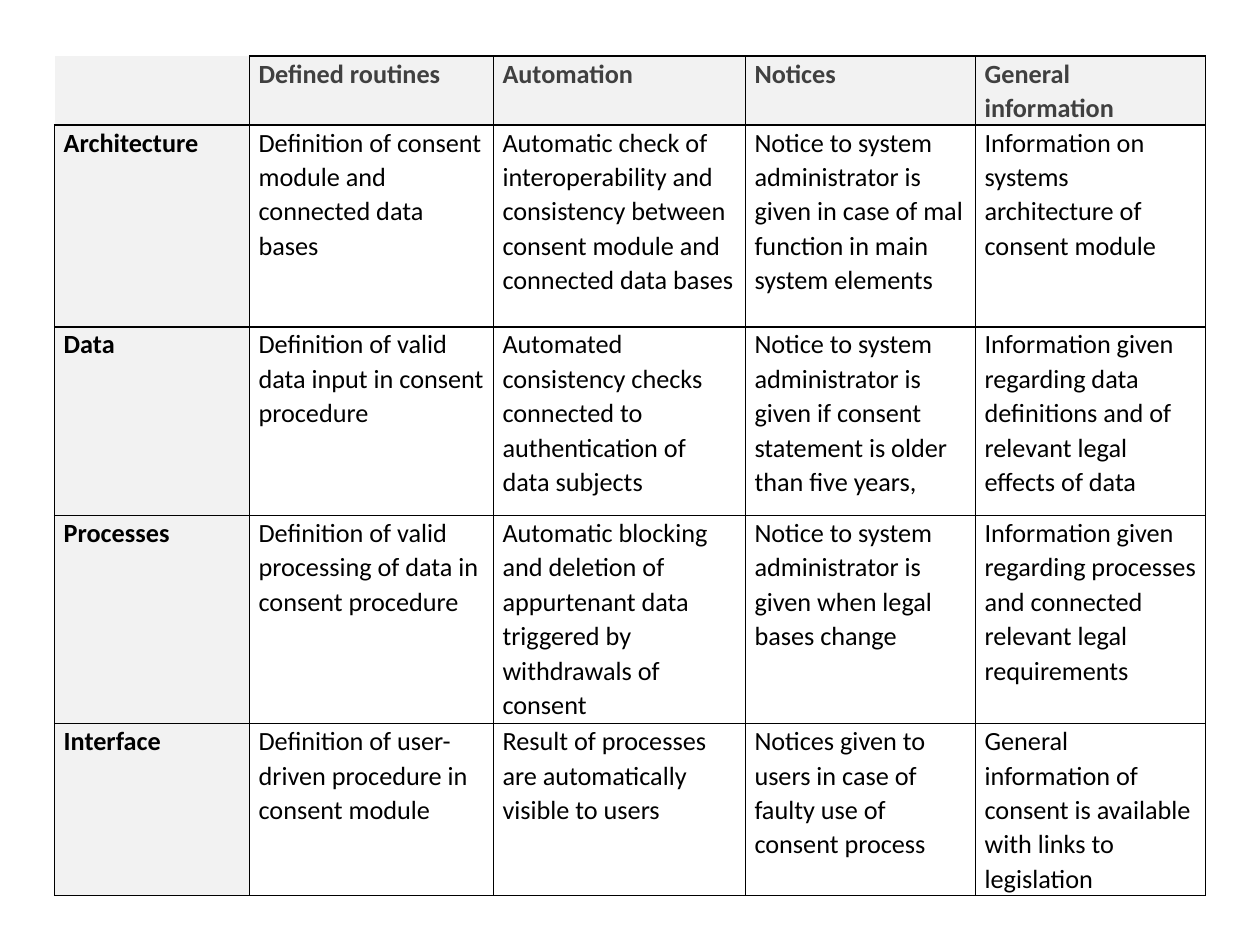
import dataclasses
import lxml.etree
import pptx
import pptx.dml.color
import pptx.oxml.ns
import pptx.table
import pptx.text.text
import pptx.util

Pt = pptx.util.Pt
GREY = "F2F2F2"
LEFT, TOP = 31.2, 32
WIDTHS = (111.4, 139.4, 144, 131.5, 131.5)
INSETS = {
    "margin_left": Pt(5.2),
    "margin_right": Pt(5.2),
    "margin_top": 0,
    "margin_bottom": 0,
}
PLAIN = {"name": "Calibri", "size": Pt(15), "bold": False}
BOLD = PLAIN | {"bold": True}


@dataclasses.dataclass
class Row:
    height: float
    texts: tuple[str, ...]


ROWS = (
    Row(26.6, ("", "Defined routines", "Automation", "Notices", "General information")),
    Row(115.4, (
        "Architecture",
        "Definition of consent module and connected data bases",
        "Automatic check of interoperability and consistency between consent module and connected data bases",
        "Notice to system administrator is given in case of mal function in main system elements",
        "Information on systems architecture of consent module",
    )),
    Row(107.8, (
        "Data",
        "Definition of valid data input in consent procedure",
        "Automated consistency checks connected to authentication of data subjects",
        "Notice to system administrator is given if consent statement is older than five years,",
        "Information given regarding data definitions and of relevant legal effects of data",
    )),
    Row(119, (
        "Processes",
        "Definition of valid processing of data in consent procedure",
        "Automatic blocking and deletion of appurtenant data triggered by withdrawals of consent",
        "Notice to system administrator is given when legal bases change",
        "Information given regarding processes and connected relevant legal requirements",
    )),
    Row(80.6, (
        "Interface",
        "Definition of user-driven procedure in consent module",
        "Result of processes are automatically visible to users",
        "Notices given to users in case of faulty use of consent process",
        "General information of consent is available with links to legislation",
    )),
)


def color(code: str) -> pptx.dml.color.RGBColor:
    return pptx.dml.color.RGBColor.from_string(code)


def format(item: object, values: dict) -> None:
    for name, value in values.items():
        setattr(item, name, value)


def border(cell: pptx.table._Cell, sides: str) -> None:
    qn = pptx.oxml.ns.qn
    props = cell._tc.get_or_add_tcPr()
    for side in "LRTB":
        line = lxml.etree.SubElement(props, qn(f"a:ln{side}"), w=str(Pt(1)))
        if side in sides:
            fill = lxml.etree.SubElement(line, qn("a:solidFill"))
            lxml.etree.SubElement(fill, qn("a:srgbClr"), val="000000")
        else:
            lxml.etree.SubElement(line, qn("a:noFill"))


def write(cell: pptx.table._Cell, text: str, style: dict, ink: str) -> None:
    cell.text = text
    para = cell.text_frame.paragraphs[0]
    para.line_spacing = 1.07
    format(para.font, style)
    for run in para.runs:
        format(run.font, style)
        run.font.color.rgb = color(ink)


def draw(cell: pptx.table._Cell, text: str, row: int, col: int) -> None:
    head = row == 0 or col == 0
    format(cell, INSETS)
    border(cell, "LRTB" if text else "RB")
    if head:
        cell.fill.solid()
        cell.fill.fore_color.rgb = color(GREY)
    else:
        cell.fill.background()
    write(cell, text, BOLD if head else PLAIN, "404040" if row == 0 else "000000")


def main() -> None:
    deck = pptx.Presentation()
    format(deck, {"slide_width": Pt(720), "slide_height": Pt(540)})
    slide = deck.slides.add_slide(deck.slide_layouts[6])
    frame = slide.shapes.add_table(
        len(ROWS), len(WIDTHS), Pt(LEFT), Pt(TOP),
        Pt(sum(WIDTHS)), Pt(sum(row.height for row in ROWS)),
    )
    table = frame.table
    format(table, {"first_row": False, "horz_banding": False})
    for col, width in enumerate(WIDTHS):
        table.columns[col].width = Pt(width)
    for num, row in enumerate(ROWS):
        table.rows[num].height = Pt(row.height)
        for col, text in enumerate(row.texts):
            draw(table.cell(num, col), text, num, col)
    deck.save("out.pptx")


if __name__ == "__main__":
    main()
